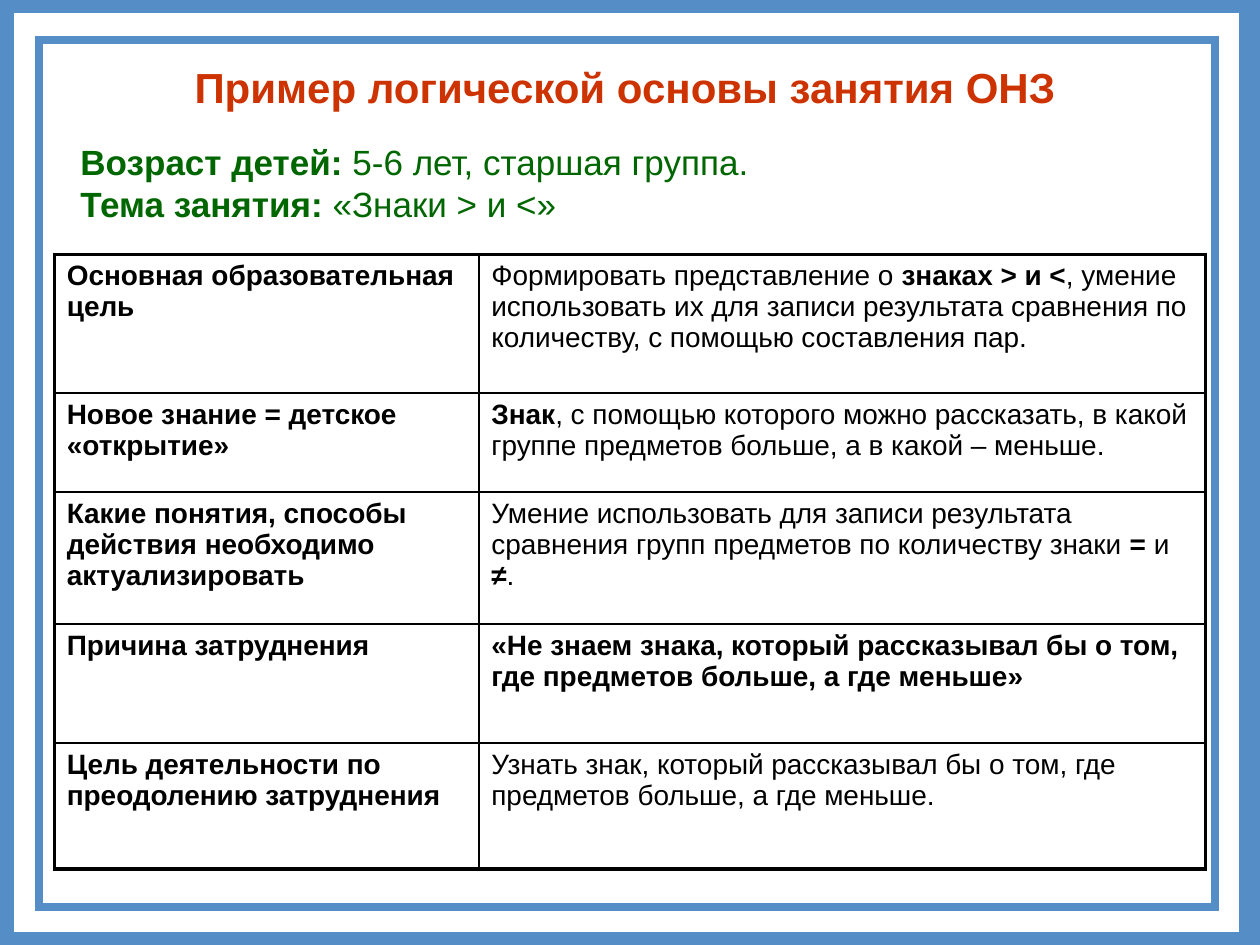
from pptx import Presentation
from pptx.dml.color import RGBColor
from pptx.enum.shapes import MSO_SHAPE
from pptx.enum.text import PP_ALIGN
from pptx.oxml.ns import qn
from pptx.util import Pt
from lxml import etree

RECT = MSO_SHAPE.RECTANGLE
LEFT, CENTER = PP_ALIGN.LEFT, PP_ALIGN.CENTER
BLUE = RGBColor(0x55, 0x8E, 0xC7)
RED = RGBColor(0xCC, 0x33, 0x00)
GREEN = RGBColor(0x00, 0x66, 0x00)
BLACK = RGBColor(0, 0, 0)
WHITE = RGBColor(255, 255, 255)

THICK, THIN = 2.25, 1
COLS = [242.6, 415.4]
ROWS = [
    (79.4, "*Основная образовательная цель*",
     "Формировать представление о *знаках > и <*, умение использовать их "
     "для записи результата сравнения по количеству, с помощью составления пар."),
    (56.6, "*Новое знание = детское «открытие»*",
     "*Знак*, с помощью которого можно рассказать, в какой группе предметов "
     "больше, а в какой – меньше."),
    (75.4, "*Какие понятия, способы действия необходимо актуализировать*",
     "Умение использовать для записи результата сравнения групп предметов "
     "по количеству знаки *=* и *≠*."),
    (68, "*Причина затруднения*",
     "*«Не знаем знака, который рассказывал бы о том, где предметов больше, "
     "а где меньше»*"),
    (72, "*Цель деятельности по преодолению затруднения*",
     "Узнать знак, который рассказывал бы о том, где предметов больше, "
     "а где меньше."),
]


def style(item, look):
    for name, value in look.items():
        setattr(item, name, value)


def write(para, text, size, color):
    for i, part in enumerate(text.split("*")):
        if part:
            run = para.add_run()
            run.text = part
            style(run.font, {"name": "Arial", "size": Pt(size), "bold": i % 2 == 1})
            run.font.color.rgb = color


def frame(slide, box, width):
    shape = slide.shapes.add_shape(RECT, *map(Pt, box))
    shape.shadow.inherit = False
    shape.fill.background()
    shape.line.color.rgb = BLUE
    shape.line.width = Pt(width)
    line = shape.line.color and shape.element.spPr.find(qn("a:ln"))
    etree.SubElement(line, qn("a:miter"), lim="800000")


def label(slide, box, lines, size, color, align):
    text = slide.shapes.add_textbox(*map(Pt, box)).text_frame
    text.word_wrap = True
    for i, line in enumerate(lines):
        para = text.add_paragraph() if i else text.paragraphs[0]
        para.alignment = align
        write(para, line, size, color)


def border(cell, sides):
    props = cell._tc.get_or_add_tcPr()
    for side, width in sides.items():
        line = etree.SubElement(props, qn("a:ln" + side), w=str(Pt(width)))
        fill = etree.SubElement(line, qn("a:solidFill"))
        etree.SubElement(fill, qn("a:srgbClr"), val=str(BLACK))


def grid(slide, box):
    table = slide.shapes.add_table(len(ROWS), len(COLS), *map(Pt, box)).table
    style(table, {"first_row": False, "horz_banding": False})
    for col, width in zip(table.columns, COLS):
        col.width = Pt(width)
    for r, (height, *texts) in enumerate(ROWS):
        table.rows[r].height = Pt(height)
        for c, text in enumerate(texts):
            cell = table.cell(r, c)
            border(cell, {
                "L": THICK if c == 0 else THIN,
                "R": THICK if c == len(COLS) - 1 else THIN,
                "T": THICK if r == 0 else THIN,
                "B": THICK if r == len(ROWS) - 1 else THIN,
            })
            cell.fill.solid()
            cell.fill.fore_color.rgb = WHITE
            write(cell.text_frame.paragraphs[0], text, 16, BLACK)


def main():
    deck = Presentation()
    style(deck, {"slide_width": Pt(720), "slide_height": Pt(540)})
    slide = deck.slides.add_slide(deck.slide_layouts[6])
    grid(slide, (31, 145.3, sum(COLS), sum(row[0] for row in ROWS)))
    frame(slide, (0.7, 0, 715, 540), 15)
    frame(slide, (22.3, 23, 671.8, 495.4), 4.5)
    label(slide, (38.9, 31.7, 636.5, 36.7),
          ["*Пример логической основы занятия ОНЗ*"], 24, RED, CENTER)
    label(slide, (38.9, 77, 621.4, 55.4),
          ["*Возраст детей: *5-6 лет, старшая группа.",
           "*Тема занятия: *«Знаки > и <»"], 20, GREEN, LEFT)
    deck.save("out.pptx")


if __name__ == "__main__":
    main()
